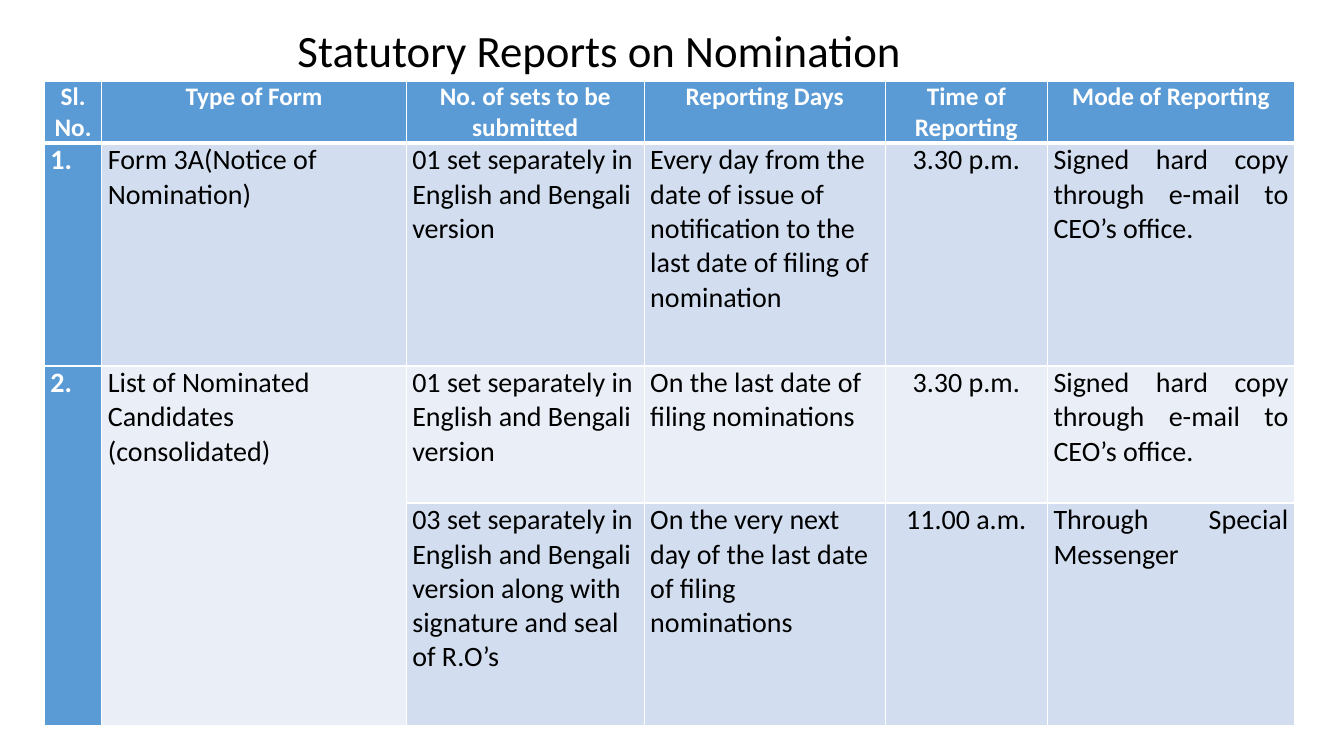
import pptx
import pptx.dml.color
import pptx.enum.text
import pptx.oxml
import pptx.oxml.ns
import pptx.util
from pptx.util import Inches

WHITE = pptx.dml.color.RGBColor(0xFF, 0xFF, 0xFF)
BLACK = pptx.dml.color.RGBColor(0x00, 0x00, 0x00)
BLUE = pptx.dml.color.RGBColor(0x5B, 0x9B, 0xD5)
DARK_BAND = pptx.dml.color.RGBColor(0xD2, 0xDE, 0xEF)
LIGHT_BAND = pptx.dml.color.RGBColor(0xEA, 0xEF, 0xF7)
FONT = "Calibri"

ALIGN = pptx.enum.text.PP_ALIGN
COLUMN_ALIGNMENTS = [ALIGN.JUSTIFY, ALIGN.LEFT, ALIGN.LEFT, ALIGN.LEFT,
                     ALIGN.CENTER, ALIGN.JUSTIFY]
COLUMN_WIDTHS = [0.57, 3.02, 2.36, 2.39, 1.61, 2.45]
ROW_HEIGHTS = [0.61, 2.21, 1.36, 2.21]
ROW_FILLS = [BLUE, DARK_BAND, LIGHT_BAND, DARK_BAND]

BOTH_LANGUAGES = "01 set separately in English and Bengali version"
BY_EMAIL = "Signed hard copy through e-mail to CEO’s office."
REPORTS = [
    ["Sl. No.", "Type of Form", "No. of sets to be submitted",
     "Reporting Days", "Time of Reporting", "Mode of Reporting"],
    ["1.", "Form 3A(Notice of Nomination)", BOTH_LANGUAGES,
     "Every day from the date of issue of notification to the last date of "
     "filing of nomination", "3.30 p.m.", BY_EMAIL],
    ["2.", "List of Nominated Candidates (consolidated)", BOTH_LANGUAGES,
     "On the last date of filing nominations", "3.30 p.m.", BY_EMAIL],
    ["", "", "03 set separately in English and Bengali version along with "
     "signature and seal of R.O’s",
     "On the very next day of the last date of filing nominations",
     "11.00 a.m.", "Through Special Messenger"],
]


def write(paragraph, text, size, color, bold, alignment):
    """Add one formatted run to a paragraph."""
    paragraph.alignment = alignment
    run = paragraph.add_run()
    run.text = text
    run.font.name = FONT
    run.font.size = pptx.util.Pt(size)
    run.font.bold = bold
    run.font.color.rgb = color


def add_borders(cell, top, bottom):
    """Draw white cell borders, with top and bottom widths in points."""
    properties = cell._tc.get_or_add_tcPr()
    for side, width in zip("LRTB", (1, 1, top, bottom)):
        properties.append(pptx.oxml.parse_xml(
            f'<a:ln{side} {pptx.oxml.ns.nsdecls("a")} w="{pptx.util.Pt(width)}">'
            f'<a:solidFill><a:srgbClr val="{WHITE}"/></a:solidFill></a:ln{side}>'))


def add_heading(slide, left, top, width, height):
    """Place the slide title in the given box."""
    heading = slide.shapes.title
    heading.left, heading.top, heading.width, heading.height = map(
        Inches, (left, top, width, height))
    frame = heading.text_frame
    frame.word_wrap = True
    frame.auto_size = pptx.enum.text.MSO_AUTO_SIZE.NONE
    write(frame.paragraphs[0], "Statutory Reports on Nomination", 32, BLACK,
          False, ALIGN.CENTER)


def add_report_cell(cell, row, column, text):
    """Format and fill one cell of the report table."""
    cell.margin_left = cell.margin_right = Inches(0.06)
    cell.margin_top = cell.margin_bottom = 0
    add_borders(cell, 3 if row == 1 else 1, 3 if row == 0 else 1)
    is_header = row == 0
    is_label = is_header or column == 0
    cell.fill.solid()
    cell.fill.fore_color.rgb = BLUE if is_label else ROW_FILLS[row]
    if text:
        write(cell.text_frame.paragraphs[0], text, 18 if is_header else 20,
              WHITE if is_label else BLACK, is_label,
              ALIGN.CENTER if is_header else COLUMN_ALIGNMENTS[column])


def add_reports(slide, left, top, width, height):
    """Build the report table, scaled to the given box."""
    reports = slide.shapes.add_table(
        len(REPORTS), len(COLUMN_WIDTHS), Inches(left), Inches(top),
        Inches(width), Inches(height)).table
    for column, share in zip(reports.columns, COLUMN_WIDTHS):
        column.width = Inches(width * share / sum(COLUMN_WIDTHS))
    for row, share in zip(reports.rows, ROW_HEIGHTS):
        row.height = Inches(height * share / sum(ROW_HEIGHTS))
    for row, texts in enumerate(REPORTS):
        for column, text in enumerate(texts):
            add_report_cell(reports.cell(row, column), row, column, text)
    for column in (0, 1):
        reports.cell(2, column).merge(reports.cell(3, column))


def main():
    """Build and save the slide."""
    deck = pptx.Presentation()
    deck.slide_width, deck.slide_height = Inches(13.33), Inches(7.5)
    slide = deck.slides.add_slide(deck.slide_layouts[5])
    add_reports(slide, 0.44, 0.81, 12.4, 6.39)
    add_heading(slide, 2.33, 0.17, 7.23, 0.64)
    deck.save("out.pptx")


if __name__ == "__main__":
    main()
